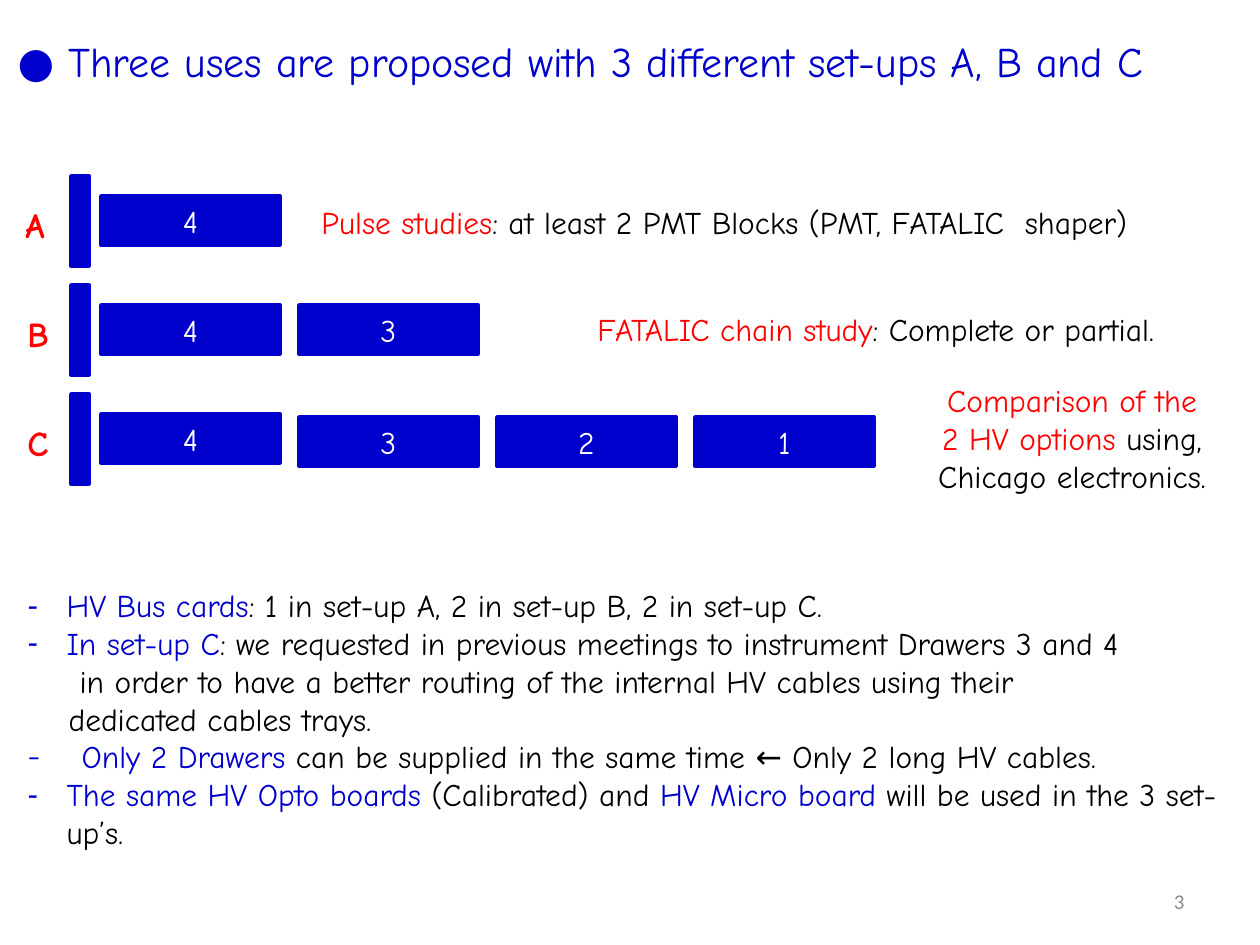
from lxml import etree
from pptx import Presentation
from pptx.dml.color import RGBColor
from pptx.enum.shapes import MSO_SHAPE
from pptx.enum.text import MSO_ANCHOR, MSO_AUTO_SIZE, PP_ALIGN
from pptx.oxml.ns import qn
from pptx.util import Pt

RECTANGLE = MSO_SHAPE.RECTANGLE
TOP, MIDDLE = MSO_ANCHOR.TOP, MSO_ANCHOR.MIDDLE
LEFT, CENTER, RIGHT = PP_ALIGN.LEFT, PP_ALIGN.CENTER, PP_ALIGN.RIGHT
NO_AUTOFIT = MSO_AUTO_SIZE.NONE

EMU_PER_PX = 914400 / 126
COLORS = {"blue": "0000CC", "red": "FF0000", "black": "000000",
          "white": "FFFFFF", "gray": "8C8C8C"}
FONT = "Comic Neue"

ROW_PITCH = 109
DRAWER_PITCH = 198
# label, label offset, drawers, drop of the later drawers, note box, note lines, note alignment
SETUPS = [
    ("A", 0, "4", 0, (296, 21, 936, 50),
     [[("Pulse studies", "red"),
       (": at least 2 PMT Blocks (PMT, FATALIC  shaper)", "black")]], LEFT),
    ("B", 2, "43", 0, (572, 19, 656, 50),
     [[("FATALIC chain study", "red"), (": Complete or partial.", "black")]], LEFT),
    ("C", 2, "4321", 3, (899, -19, 320, 127),
     [[("Comparison of the", "red")],
      [("2 HV options ", "red"), ("using,", "black")],
      [("Chicago electronics.", "black")]], CENTER),
]
# bullet font (None for no bullet), left margin, runs
REMARKS = [
    ("Arial", 39, [("HV Bus cards", "blue"),
                   (": 1 in set-up A, 2 in set-up B, 2 in set-up C.", "black")]),
    ("Arial", 39, [("In set-up C", "blue"),
                   (": we requested in previous meetings to instrument Drawers 3 and 4", "black")]),
    (None, 52, [("in order to have a better routing of the internal HV cables using their", "black")]),
    (None, 41, [("dedicated cables trays.", "black")]),
    (FONT, 54, [("Only 2 Drawers ", "blue"),
                ("can be supplied in the same time ← Only 2 long HV cables.", "black")]),
    ("Arial", 39, [("The same HV Opto boards ", "blue"), ("(Calibrated) and ", "black"),
                   ("HV Micro board ", "blue"),
                   ("will be used in the 3 set-up’s.", "black")]),
]


def px(length):
    return round(length * EMU_PER_PX)


def rgb(color):
    return RGBColor.from_string(COLORS[color])


def place(shape, box):
    for name, length in zip(("left", "top", "width", "height"), box):
        setattr(shape, name, px(length))


def write(shape, lines, align=LEFT, anchor=TOP, size=18, font=FONT, bold=False):
    """Fill a shape with lines, each a list of (text, color) runs."""
    frame = shape.text_frame
    frame_format = {"word_wrap": True, "auto_size": NO_AUTOFIT, "vertical_anchor": anchor}
    for name, value in frame_format.items():
        setattr(frame, name, value)
    run_format = {"name": font, "size": Pt(size), "bold": bold}
    for index, line in enumerate(lines):
        paragraph = frame.paragraphs[0] if index == 0 else frame.add_paragraph()
        paragraph.alignment = align
        paragraph.space_before = Pt(0)
        for text, color in line:
            run = paragraph.add_run()
            run.text = text
            for name, value in run_format.items():
                setattr(run.font, name, value)
            run.font.color.rgb = rgb(color)


def add_text(slide, box, lines, **text_format):
    shape = slide.shapes.add_textbox(*map(px, box))
    write(shape, lines, **text_format)


def add_block(slide, box, text=""):
    shape = slide.shapes.add_shape(RECTANGLE, *map(px, box))
    shape.shadow.inherit = False
    shape.fill.solid()
    shape.fill.fore_color.rgb = rgb("blue")
    shape.line.color.rgb = rgb("blue")
    shape.line.width = Pt(2)
    if text:
        write(shape, [[(text, "white")]], align=CENTER, anchor=MIDDLE)


def set_bullet(paragraph, bullet_font, margin):
    properties = paragraph._p.get_or_add_pPr()
    properties.set("marL", str(px(margin)))
    properties.set("indent", str(-px(margin) if bullet_font else 0))
    if bullet_font:
        etree.SubElement(properties, qn("a:buFont")).set("typeface", bullet_font)
        etree.SubElement(properties, qn("a:buChar")).set("char", "-")
    else:
        etree.SubElement(properties, qn("a:buNone"))


def add_title(slide, box):
    title = slide.shapes.title
    place(title, box)
    write(title, [[("● Three uses are proposed with 3 different set-ups A, B and C", "blue")]],
          size=24)


def add_setup(slide, left, top, setup):
    """Draw one set-up: label, end plate, drawers and note."""
    label, label_offset, drawers, drop, note_box, note, note_align = setup
    add_text(slide, (left + label_offset, top + 21, 52, 55), [[(label, "red")]],
             size=20, bold=True)
    add_block(slide, (left + 58, top, 18, 90))
    for index, drawer in enumerate(drawers):
        drawer_top = top + 20 + (drop if index else 0)
        add_block(slide, (left + 88 + index * DRAWER_PITCH, drawer_top, 179, 49), drawer)
    note_left, note_top, width, height = note_box
    add_text(slide, (left + note_left, top + note_top, width, height), note, align=note_align)


def add_remarks(slide, box):
    body = slide.placeholders[1]
    place(body, box)
    write(body, [runs for _, _, runs in REMARKS])
    for paragraph, (bullet_font, margin, _) in zip(body.text_frame.paragraphs, REMARKS):
        set_bullet(paragraph, bullet_font, margin)


def main():
    presentation = Presentation()
    presentation.slide_width = px(1260)
    presentation.slide_height = px(945)
    slide = presentation.slides.add_slide(presentation.slide_layouts[1])
    add_title(slide, (5, 29, 1250, 63))
    for index, setup in enumerate(SETUPS):
        add_setup(slide, 13, 176 + index * ROW_PITCH, setup)
    add_remarks(slide, (15, 580, 1230, 280))
    add_text(slide, (903, 876, 294, 50), [[("3", "gray")]],
             align=RIGHT, anchor=MIDDLE, size=12, font="Calibri")
    presentation.save("out.pptx")


if __name__ == "__main__":
    main()
